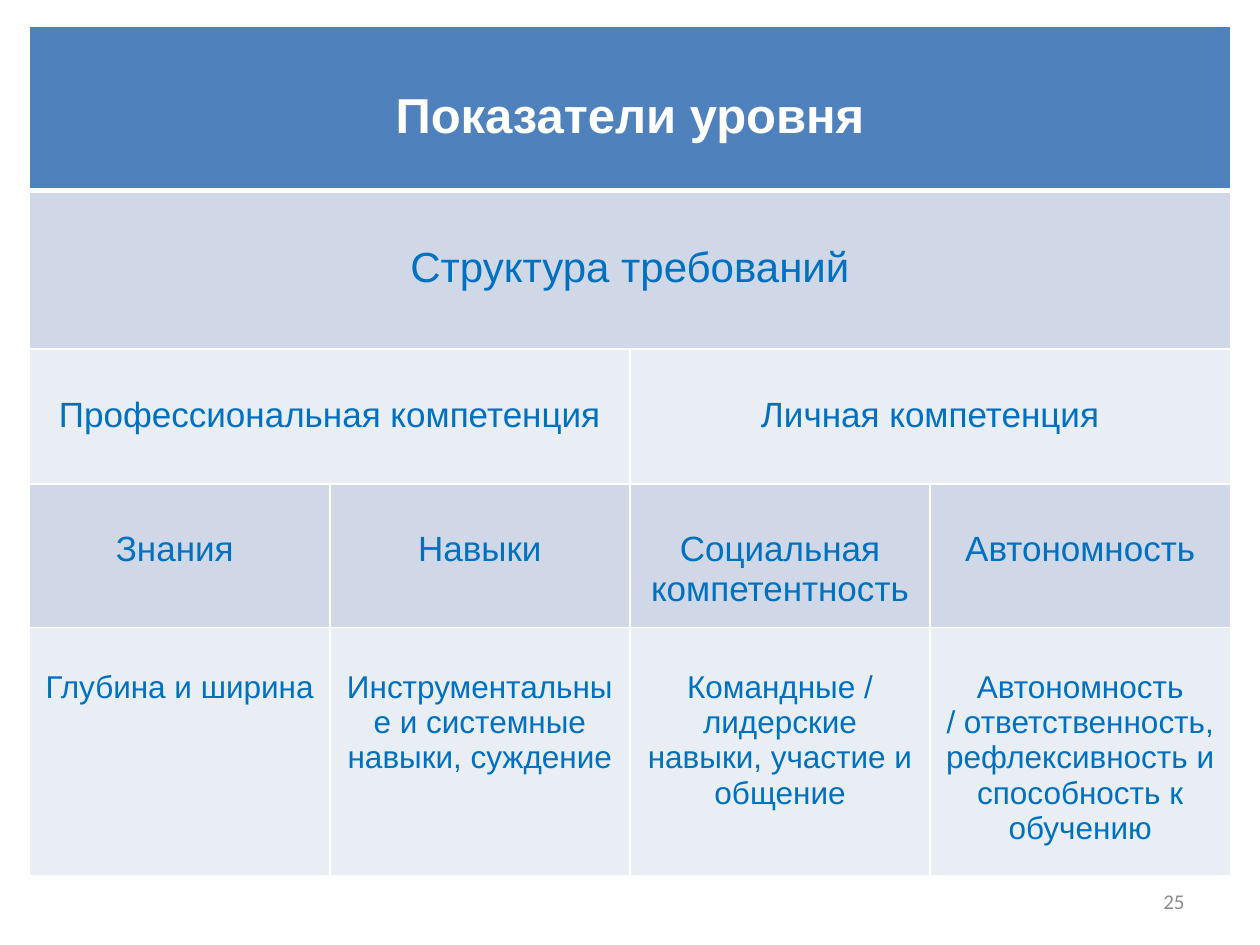
from lxml.etree import SubElement as Sub
from pptx import Presentation
from pptx.dml.color import RGBColor as Rgb
from pptx.enum.text import MSO_ANCHOR as Anchor, PP_ALIGN as Align
from pptx.oxml.ns import qn
from pptx.util import Inches, Pt

COLORS = {"head": "4F81BD", "dark": "D0D8E8", "light": "E9EDF4",
          "white": "FFFFFF", "blue": "0070C0", "gray": "8C8C8C"}

ROWS = [
    (1.3, 28, "head", ["Показатели уровня"]),
    (1.26, 24, "dark", ["Структура требований"]),
    (1.07, 20, "light", ["Профессиональная компетенция", "Личная компетенция"]),
    (1.14, 20, "dark", ["Знания ", "Навыки", "Социальная компетентность",
                        "Автономность"]),
    (1.97, 18, "light", ["Глубина и ширина",
                         "Инструментальные и системные навыки, суждение",
                         "Командные / лидерские навыки, участие и общение",
                         "Автономность\n/ ответственность, рефлексивность "
                         "и способность к обучению"]),
]


class Deck:
    def __init__(self, wide, high):
        self.prs = Presentation()
        self.prs.slide_width, self.prs.slide_height = Inches(wide), Inches(high)
        self.slide = self.prs.slides.add_slide(self.prs.slide_layouts[6])

    def place(self, *shares):
        wide, high = self.prs.slide_width, self.prs.slide_height
        return [int(s * side) for s, side in zip(shares, (wide, high) * 2)]

    def label(self, frame, text, size, color, font="Arial", bold=False,
              align=Align.CENTER):
        frame.text = text
        for para in frame.paragraphs:
            para.alignment = align
            for run in para.runs:
                run.font.name, run.font.size = font, Pt(size)
                run.font.bold = bold
                run.font.color.rgb = Rgb.from_string(COLORS[color])

    def border(self, cell, top, bottom):
        props = cell._tc.get_or_add_tcPr()
        for side, width in zip("LRTB", (1, 1, top, bottom)):
            line = Sub(props, qn(f"a:ln{side}"), w=str(Pt(width)))
            fill = Sub(line, qn("a:solidFill"))
            Sub(fill, qn("a:srgbClr"), val=COLORS["white"])

    def table(self, rows, cols, shares):
        grid = self.slide.shapes.add_table(len(rows), cols, *self.place(*shares)).table
        for r, (high, size, fill, texts) in enumerate(rows):
            grid.rows[r].height = Inches(high)
            span = cols // len(texts)
            for c in range(cols):
                cell = grid.cell(r, c)
                self.border(cell, 3 if r == 1 else 1, 3 if r == 0 else 1)
                cell.fill.solid()
                cell.fill.fore_color.rgb = Rgb.from_string(COLORS[fill])
            for i, text in enumerate(texts):
                cell = grid.cell(r, i * span)
                if span > 1:
                    cell.merge(grid.cell(r, (i + 1) * span - 1))
                cell.margin_top = Inches(0.05) + Pt(size * 1.15)
                self.label(cell.text_frame, text, size,
                           "blue" if r else "white", bold=r == 0)

    def number(self, text, shares):
        frame = self.slide.shapes.add_textbox(*self.place(*shares)).text_frame
        frame.word_wrap = True
        frame.vertical_anchor = Anchor.MIDDLE
        self.label(frame, text, 12, "gray", "Calibri", align=Align.RIGHT)


def main():
    deck = Deck(10, 7.5)
    deck.table(ROWS, 4, (0.0235, 0.028, 0.953, 0.9))
    deck.number("25", (0.717, 0.927, 0.233, 0.053))
    deck.prs.save("out.pptx")


if __name__ == "__main__":
    main()
